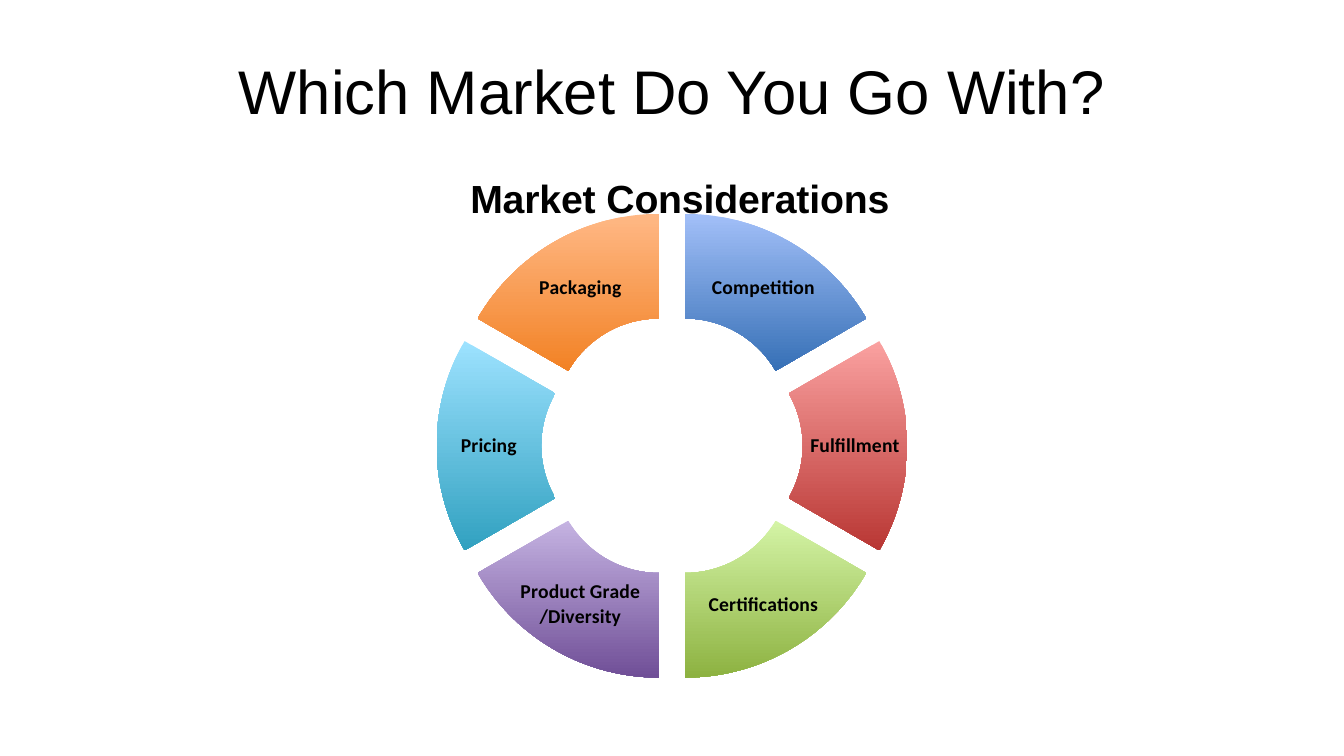
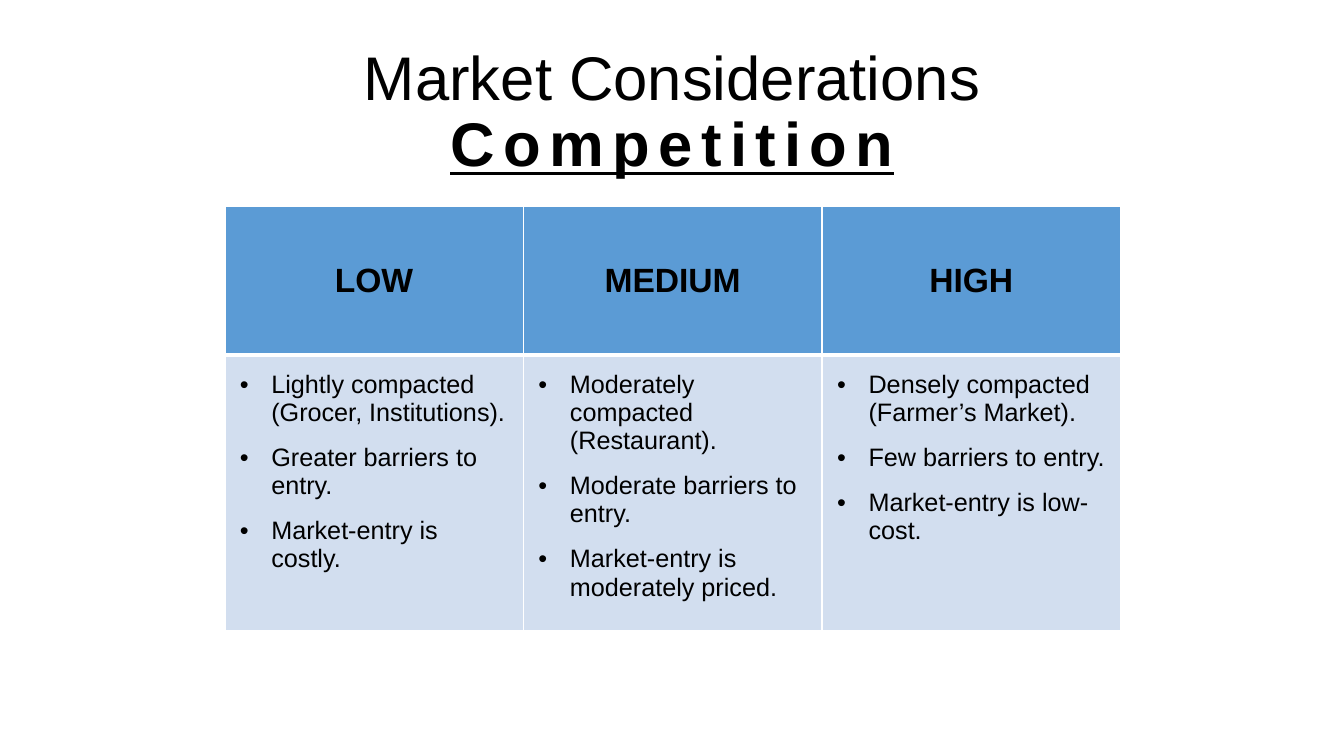
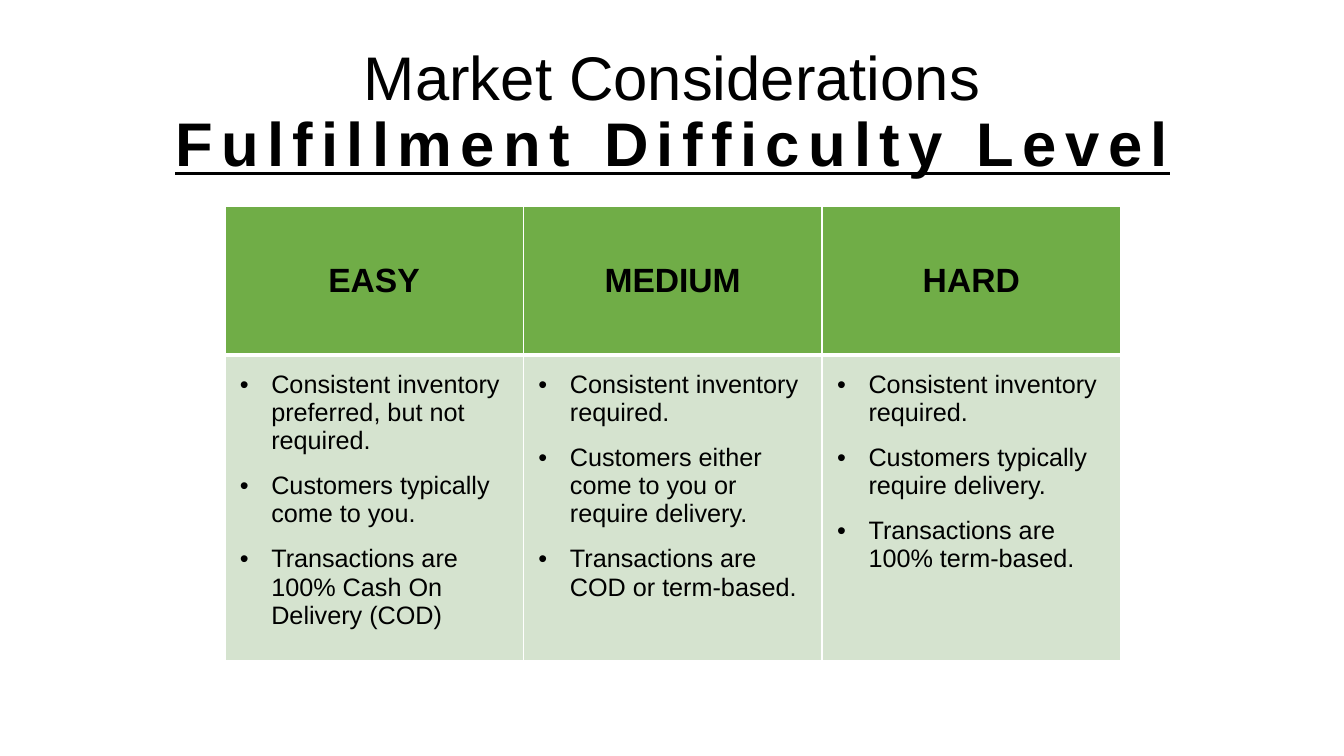
from dataclasses import dataclass

from lxml import etree
from pptx import Presentation
from pptx.chart.data import CategoryChartData
from pptx.dml.color import RGBColor
from pptx.enum.chart import XL_CHART_TYPE
from pptx.enum.text import MSO_ANCHOR, MSO_AUTO_SIZE, PP_ALIGN
from pptx.oxml.ns import qn
from pptx.util import Pt

DOUGHNUT = XL_CHART_TYPE.DOUGHNUT
MIDDLE, TOP = MSO_ANCHOR.MIDDLE, MSO_ANCHOR.TOP
CENTER, LEFT = PP_ALIGN.CENTER, PP_ALIGN.LEFT
NO_AUTOFIT = MSO_AUTO_SIZE.NONE


@dataclass(frozen=True)
class Theme:
    text: str = "000000"
    border: str = "FFFFFF"
    blue: tuple = ("5B9BD5", "D2DEEF")
    green: tuple = ("70AD47", "D5E3CF")
    font: str = "Arial"
    label_font: str = "Calibri"
    title_size: int = 44
    chart_title_size: int = 28
    header_size: int = 24
    body_size: int = 18
    label_size: int = 14
    title_spacing: int = 6
    cell_margin: float = 10.8
    bullet_indent: float = 22.5
    bullet_gap: int = 12
    outer_border: float = 1.5
    inner_border: float = 1
    header_border: float = 3


THEME = Theme()


def set_attributes(target, values):
    for name, value in values.items():
        setattr(target, name, value)


def add_element(parent, tag, **attributes):
    values = {name: str(value) for name, value in attributes.items()}
    return etree.SubElement(parent, qn(tag), values)


def set_layout(element, position, box, target=None):
    for layout in element.findall(qn("c:layout")):
        element.remove(layout)
    layout = etree.Element(qn("c:layout"))
    manual = add_element(layout, "c:manualLayout")
    if target:
        add_element(manual, "c:layoutTarget", val=target)
    for name in ("xMode", "yMode"):
        add_element(manual, f"c:{name}", val="edge")
    for name, value in zip("xywh", box):
        add_element(manual, f"c:{name}", val=value)
    element.insert(position, layout)


class Deck:
    def __init__(self, theme):
        self.theme = theme
        self.presentation = Presentation()
        set_attributes(self.presentation, {"slide_width": Pt(960), "slide_height": Pt(540)})
        self.slide = None

    def format_font(self, font, size, bold=False, name=None):
        set_attributes(font, {"size": Pt(size), "bold": bold, "name": name or self.theme.font})
        font.color.rgb = RGBColor.from_string(self.theme.text)

    def add_run(self, paragraph, text, size, bold=False):
        run = paragraph.add_run()
        run.text = text
        self.format_font(run.font, size, bold)
        return run

    def add_slide(self, title, top, height, topic=None):
        self.slide = self.presentation.slides.add_slide(self.presentation.slide_layouts[5])
        shape = self.slide.shapes.title
        set_attributes(shape, {"left": Pt(66.5), "top": Pt(top), "width": Pt(827.5), "height": Pt(height)})
        frame = shape.text_frame
        set_attributes(frame, {"word_wrap": True, "auto_size": NO_AUTOFIT, "vertical_anchor": MIDDLE})
        paragraph = frame.paragraphs[0]
        set_attributes(paragraph, {"alignment": CENTER, "line_spacing": 0.9})
        self.add_run(paragraph, title, self.theme.title_size)
        if topic:
            paragraph.add_line_break()
            run = self.add_run(paragraph, topic, self.theme.title_size, True)
            run.font.underline = True
            run.font._element.set("spc", str(self.theme.title_spacing * 100))

    def add_doughnut(self, title, segments, value, box, title_corner, plot_box, custom_labels):
        data = CategoryChartData()
        data.categories = [name for name, _ in segments]
        data.add_series(title, [value] * len(segments))
        chart = self.slide.shapes.add_chart(DOUGHNUT, *map(Pt, box), data).chart
        set_attributes(chart, {"has_legend": False, "has_title": True})
        self.format_font(chart.font, self.theme.body_size)
        paragraph = chart.chart_title.text_frame.paragraphs[0]
        self.add_run(paragraph, title, self.theme.chart_title_size, True)
        set_layout(chart.chart_title._element, 1, title_corner)
        set_layout(chart._chartSpace.chart.plotArea, 0, plot_box, "inner")

        chart.plots[0].vary_by_categories = True
        series = chart.plots[0].series[0]
        for index, (_, colors) in enumerate(segments):
            point_format = series.points[index].format
            point_format.fill.gradient()
            point_format.fill.gradient_angle = 270
            for stop, color in zip(point_format.fill.gradient_stops, colors):
                stop.color.rgb = RGBColor.from_string(color)
            point_format.line.fill.background()
        explosion = etree.Element(qn("c:explosion"), val="25")
        series._element.find(qn("c:dPt")).addprevious(explosion)

        labels = series.data_labels
        set_attributes(labels, {"show_category_name": True, "show_value": False, "show_percentage": False})
        label_style = (self.theme.label_size, True, self.theme.label_font)
        self.format_font(labels.font, *label_style)
        for index, text in custom_labels.items():
            frame = series.points[index].data_label.text_frame
            frame.text = text
            for paragraph in frame.paragraphs:
                self.format_font(paragraph.runs[0].font, *label_style)

    def add_levels_table(self, columns, colors, body_height):
        count = len(columns)
        heights = (106.75, body_height)
        box = (160.5, 147, 640, sum(heights))
        table = self.slide.shapes.add_table(2, count, *map(Pt, box)).table
        table.horz_banding = False
        for row, height in zip(table.rows, heights):
            row.height = Pt(height)
        for index, (heading, points) in enumerate(columns):
            table.columns[index].width = Pt(640 / count)
            sides = (self.side_border(index == 0), self.side_border(index == count - 1))
            header, body = table.cell(0, index), table.cell(1, index)
            outer, divider = self.theme.outer_border, self.theme.header_border
            self.format_cell(header, colors[0], MIDDLE, (*sides, outer, divider))
            self.format_cell(body, colors[1], TOP, (*sides, divider, outer))
            paragraph = header.text_frame.paragraphs[0]
            paragraph.alignment = CENTER
            self.add_run(paragraph, heading, self.theme.header_size, True)
            self.add_bullets(body.text_frame, points)

    def side_border(self, is_outer):
        return self.theme.outer_border if is_outer else self.theme.inner_border

    def format_cell(self, cell, color, anchor, borders):
        margin = Pt(self.theme.cell_margin)
        set_attributes(cell, {
            "vertical_anchor": anchor,
            "margin_left": margin,
            "margin_right": margin,
            "margin_top": margin,
            "margin_bottom": margin,
        })
        properties = cell._tc.get_or_add_tcPr()
        for side, width in zip("LRTB", borders):
            line = add_element(properties, f"a:ln{side}", w=Pt(width))
            fill = add_element(line, "a:solidFill")
            add_element(fill, "a:srgbClr", val=self.theme.border)
        cell.fill.solid()
        cell.fill.fore_color.rgb = RGBColor.from_string(color)

    def add_bullets(self, frame, points):
        indent = Pt(self.theme.bullet_indent)
        for index, text in enumerate(points):
            paragraph = frame.add_paragraph() if index else frame.paragraphs[0]
            properties = paragraph._p.get_or_add_pPr()
            set_attributes(paragraph, {"alignment": LEFT, "space_after": Pt(self.theme.bullet_gap)})
            properties.set("marL", str(indent))
            properties.set("indent", str(-indent))
            add_element(properties, "a:buFont", typeface=self.theme.font)
            add_element(properties, "a:buChar", char="•")
            self.add_run(paragraph, text, self.theme.body_size)


SEGMENTS = [
    ("Competition", ("A2BFF8", "3670B6")),
    ("Fulfillment", ("FAA1A0", "B93734")),
    ("Certifications", ("D4F4A6", "8DB241")),
    ("Product Grade", ("C5B3E2", "704F97")),
    ("Pricing", ("9DE2FF", "31A1C0")),
    ("Packaging", ("FFB885", "F28225")),
]

COMPETITION = [
    ("LOW", [
        "Lightly compacted (Grocer, Institutions).",
        "Greater barriers to entry.",
        "Market-entry is costly.",
    ]),
    ("MEDIUM", [
        "Moderately compacted (Restaurant).",
        "Moderate barriers to entry.",
        "Market-entry is moderately priced.",
    ]),
    ("HIGH", [
        "Densely compacted (Farmer’s Market).",
        "Few barriers to entry.",
        "Market-entry is low-cost.",
    ]),
]

FULFILLMENT = [
    ("EASY", [
        "Consistent inventory preferred, but not required.",
        "Customers typically come to you.",
        "Transactions are 100% Cash On Delivery (COD)",
    ]),
    ("MEDIUM", [
        "Consistent inventory required.",
        "Customers either come to you or require delivery.",
        "Transactions are COD or term-based.",
    ]),
    ("HARD", [
        "Consistent inventory required.",
        "Customers typically require delivery.",
        "Transactions are 100% term-based.",
    ]),
]

LEVEL_SLIDES = [
    ("Competition", COMPETITION, THEME.blue, 197),
    ("Fulfillment Difficulty Level", FULFILLMENT, THEME.green, 218.5),
]


def main():
    subject = "Market Considerations"
    deck = Deck(THEME)
    deck.add_slide("Which Market Do You Go With?", 19.5, 96)
    deck.add_doughnut(
        subject, SEGMENTS, 17,
        box=(66, 115.5, 828, 386.5),
        title_corner=(0.32, 0.01),
        plot_box=(0.29, 0.09, 0.42, 0.87),
        custom_labels={3: "Product Grade\n/Diversity"},
    )
    for topic, columns, colors, body_height in LEVEL_SLIDES:
        deck.add_slide(subject, 28.75, 104.5, topic)
        deck.add_levels_table(columns, colors, body_height)
    deck.presentation.save("out.pptx")


if __name__ == "__main__":
    main()
